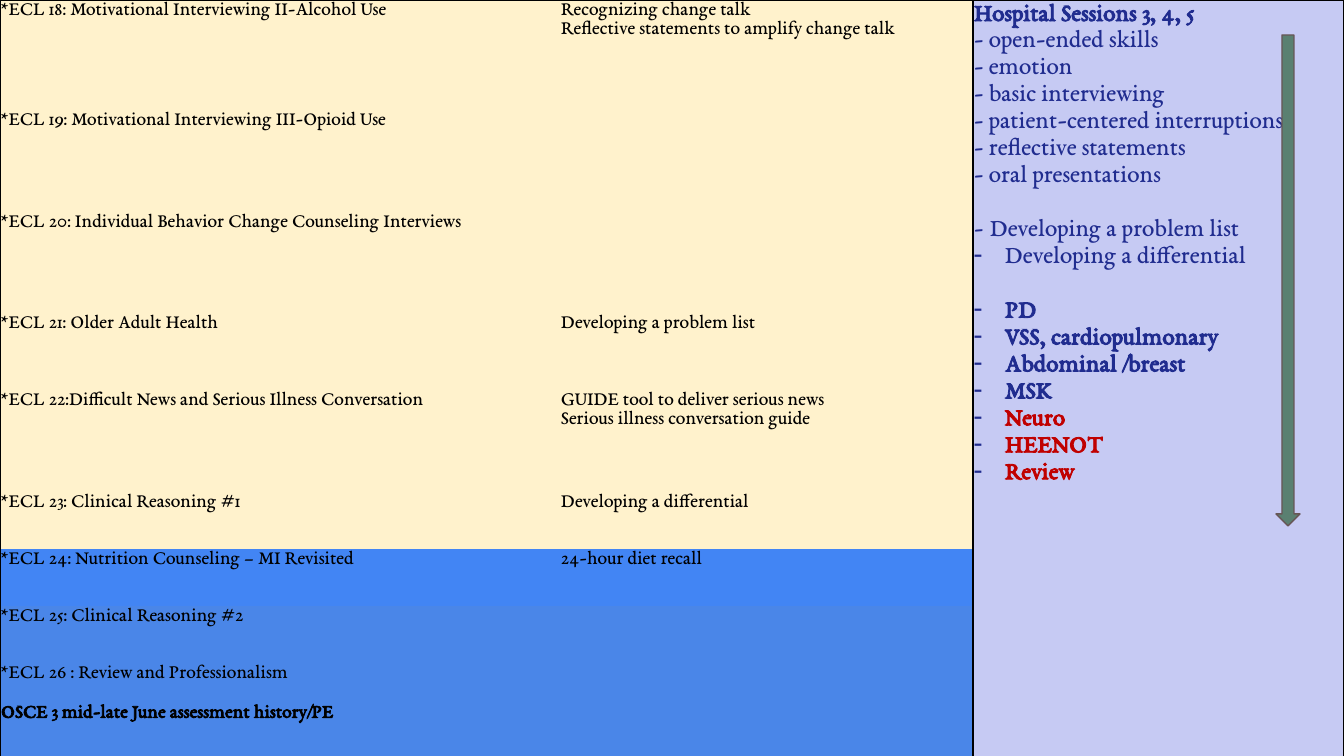
import pptx
import pptx.dml.color
import pptx.enum.shapes
import pptx.oxml
import pptx.oxml.ns
import pptx.util
from lxml import etree

PX = 914400 / 100.8  # EMU in one px
COLORS = {
    "black": "000000", "navy": "202C8F", "red": "C00000",
    "cream": "FFF2CC", "bright": "4285F4", "blue": "4A86E8",
    "lilac": "C6CAF3", "green": "5A8071", "brown": "675656",
}


def px(count):
    return pptx.util.Emu(round(count * PX))


def color(name):
    return pptx.dml.color.RGBColor.from_string(COLORS[name])


def add_xml(parent, tag, **attributes):
    return etree.SubElement(parent, pptx.oxml.ns.qn(tag), attributes)


class Board:
    """Holds the style and the current slide."""

    font = "EB Garamond"

    def __init__(self, page):
        self.page = page

    def table(self, columns, rows):
        frame = self.page.shapes.add_table(
            len(rows), len(columns), 0, 0, px(sum(columns)), px(sum(rows)))
        grid = frame.table
        grid.first_row = grid.horz_banding = False
        for column, width in zip(grid.columns, columns):
            column.width = px(width)
        for row, height in zip(grid.rows, rows):
            row.height = px(height)
        return grid

    def cell(self, cell, fill, edges):
        """Set margins, fill and the black edges, given as letters of LRTB."""
        cell.margin_left = cell.margin_right = cell.margin_top = px(1)
        cell.margin_bottom = 0
        properties = cell._tc.get_or_add_tcPr()
        for side in "LRTB":
            line = add_xml(properties, f"a:ln{side}", w="12700")
            if side in edges:
                solid = add_xml(line, "a:solidFill")
                add_xml(solid, "a:srgbClr", val=COLORS["black"])
            else:
                add_xml(line, "a:noFill")
        cell.fill.solid()
        cell.fill.fore_color.rgb = color(fill)

    def para(self, cell, index, spans, size, ink, bold=False, gap=0, spacing=None):
        """Add one paragraph; spans are (text, italic) pairs."""
        frame = cell.text_frame
        para = frame.paragraphs[0] if index == 0 else frame.add_paragraph()
        if spacing:
            para.line_spacing = spacing
        if gap:
            para.space_before = pptx.util.Pt(gap)
        for text, italic in spans:
            span = para.add_run()
            span.text = text
            span.font.name = self.font
            span.font.size = pptx.util.Pt(size)
            span.font.bold = bold
            span.font.italic = italic
            span.font.color.rgb = color(ink)
        return para

    def bullet(self, para, ink, indent):
        properties = para._p.get_or_add_pPr()
        properties.set("marL", str(px(indent)))
        properties.set("indent", str(-px(indent)))
        tint = add_xml(properties, "a:buClr")
        add_xml(tint, "a:srgbClr", val=COLORS[ink])
        add_xml(properties, "a:buChar", char="-")

    def down_arrow(self, left, top, width, height, fill, line):
        arrow = self.page.shapes.add_shape(
            pptx.enum.shapes.MSO_SHAPE.DOWN_ARROW,
            px(left), px(top), px(width), px(height))
        arrow.shadow.inherit = False
        arrow.fill.solid()
        arrow.fill.fore_color.rgb = color(fill)
        arrow.line.color.rgb = color(line)
        arrow.line.width = pptx.util.Pt(1)


# Session rows: height, fill, session lines, skill lines
SESSIONS = [
    (110, "cream", "*ECL 18: Motivational Interviewing II-Alcohol Use",
     ["Recognizing change talk", "Reflective statements to amplify change talk"]),
    (102, "cream", "*ECL 19: Motivational Interviewing III-Opioid Use", []),
    (101, "cream", "*ECL 20: Individual Behavior Change Counseling Interviews", []),
    (77, "cream", "*ECL 21: Older Adult Health", ["Developing a problem list"]),
    (102, "cream", "*ECL 22:Difficult News and Serious Illness Conversation",
     ["GUIDE tool to deliver serious news", "Serious illness conversation guide"]),
    (57, "cream", "*ECL 23: Clinical Reasoning #1", ["Developing a differential"]),
    (57, "bright", "*ECL 24: Nutrition Counseling – MI Revisited", ["24-hour diet recall"]),
    (57, "blue", "*ECL 25: Clinical Reasoning #2", []),
    (97, "blue", "*ECL 26 : Review and Professionalism", []),
]
ASSESSMENT = "OSCE 3 mid-late June assessment history/PE"

# Hospital lines: spans, ink, bold, bulleted, gap before
HOSPITAL = [([("Hospital Sessions 3, 4, 5", False)], "navy", True, False, 0)]
HOSPITAL += [([(f"- {skill}", False)], "navy", False, False, 0) for skill in (
    "open-ended skills", "emotion", "basic interviewing",
    "patient-centered interruptions", "reflective statements", "oral presentations")]
HOSPITAL += [
    ([("- ", True), ("Developing a problem list", False)], "navy", False, False, 19.3),
    ([("Developing a differential", False)], "navy", False, True, 0),
    ([("PD", False)], "navy", True, True, 19.3),
]
HOSPITAL += [([(exam, False)], ink, True, True, 0) for exam, ink in (
    ("VSS, cardiopulmonary", "navy"), ("Abdominal /breast", "navy"), ("MSK", "navy"),
    ("Neuro", "red"), ("HEENOT", "red"), ("Review", "red"))]


def main():
    deck = pptx.Presentation()
    deck.slide_width, deck.slide_height = px(1344), px(756)
    board = Board(deck.slides.add_slide(deck.slide_layouts[6]))

    # Sessions and skills
    grid = board.table([560, 413, 371], [session[0] for session in SESSIONS])
    last = len(SESSIONS) - 1
    for row, (_, fill, session, skills) in enumerate(SESSIONS):
        ends = ("T" if row == 0 else "") + ("B" if row == last else "")
        board.cell(grid.cell(row, 0), fill, "L" + ends)
        board.cell(grid.cell(row, 1), fill, "R" + ends)
        board.cell(grid.cell(row, 2), "lilac", "LR" + ends)
        board.para(grid.cell(row, 0), 0, [(session, False)], 14, "black")
        for index, skill in enumerate(skills):
            board.para(grid.cell(row, 1), index, [(skill, False)], 14, "black")
    board.para(grid.cell(last, 0), 1, [(ASSESSMENT, False)], 14, "black",
               bold=True, gap=14.3)

    # Hospital sessions column
    hospital = grid.cell(0, 2)
    hospital.merge(grid.cell(last, 2))
    for index, (spans, ink, bold, bulleted, gap) in enumerate(HOSPITAL):
        para = board.para(hospital, index, spans, 18, ink, bold, gap, 1.07)
        if bulleted:
            board.bullet(para, "navy", 31)

    # Progress arrow
    board.down_arrow(1276, 35, 24, 491, "green", "brown")

    deck.save("out.pptx")


if __name__ == "__main__":
    main()
